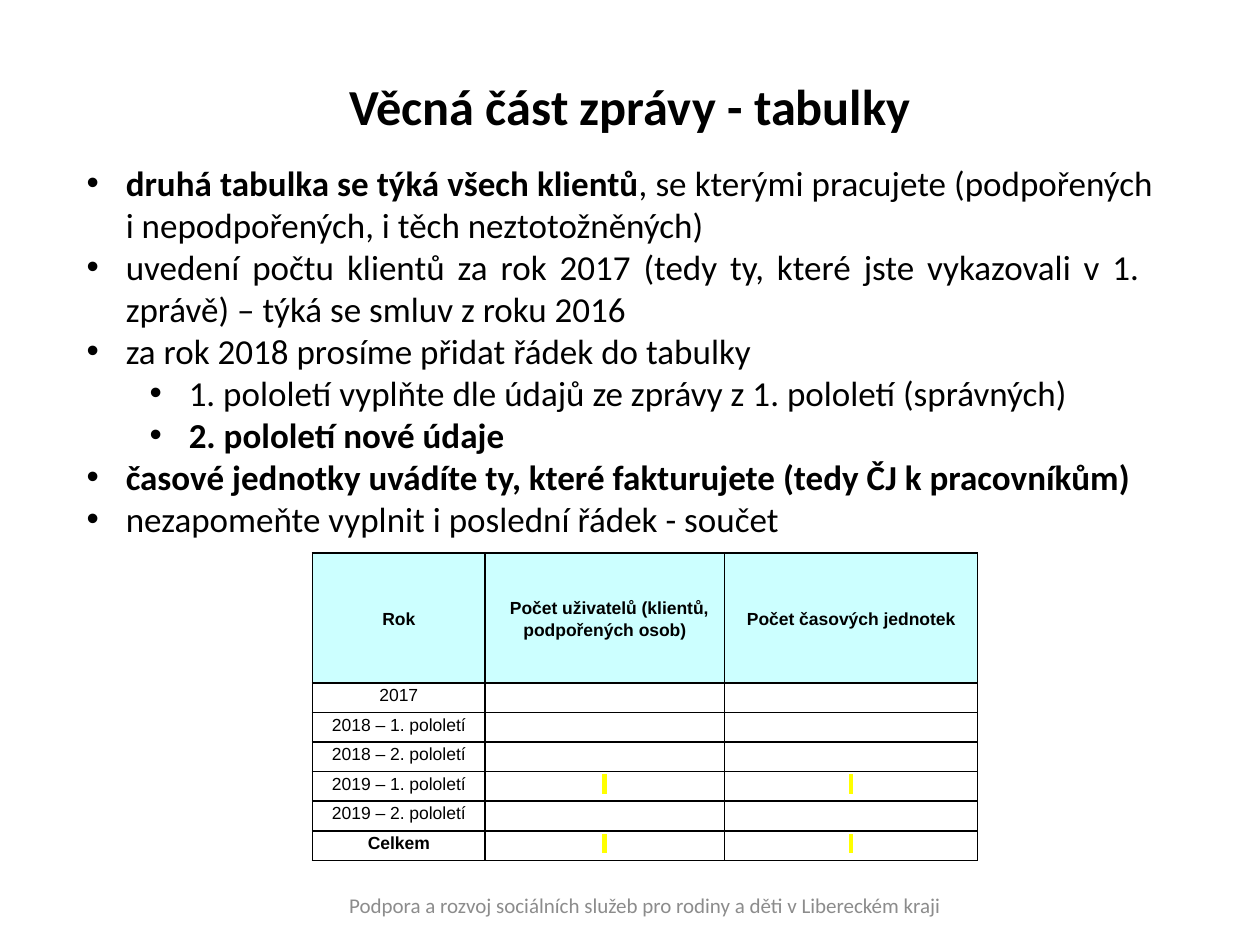
from lxml.etree import SubElement
from pptx import Presentation
from pptx.dml.color import RGBColor
from pptx.enum.text import MSO_ANCHOR as Anchor, MSO_AUTO_SIZE as AutoSize, PP_ALIGN as Align
from pptx.oxml.ns import qn
from pptx.util import Inches, Pt

TITLE = "Věcná část zprávy - tabulky"
FOOTER = "Podpora a rozvoj sociálních služeb pro rodiny a děti v Libereckém kraji"
# (level, [(text, bold), ...])
BULLETS = [
    (0, [("druhá tabulka se týká všech klientů", True),
         (", se kterými pracujete (podpořených i nepodpořených, i těch neztotožněných)", False)]),
    (0, [("uvedení počtu klientů za rok 2017 (tedy ty, které jste vykazovali v 1.  zprávě)"
          " – týká se smluv z roku 2016", False)]),
    (0, [("za rok 2018 prosíme přidat řádek do tabulky", False)]),
    (1, [("1. pololetí vyplňte dle údajů ze zprávy z 1. pololetí (správných)", False)]),
    (1, [("2. pololetí nové údaje", True)]),
    (0, [("časové jednotky uvádíte ty, které fakturujete (tedy ČJ k pracovníkům)", True)]),
    (0, [("nezapomeňte vyplnit i poslední řádek - součet", False)]),
]
HEADERS = ["Rok", "Počet uživatelů (klientů, podpořených osob)", "Počet časových jednotek"]
PERIODS = ["2017", "2018 – 1. pololetí", "2018 – 2. pololetí",
           "2019 – 1. pololetí", "2019 – 2. pololetí", "Celkem"]
MARKED_PERIODS = {"2019 – 1. pololetí", "Celkem"}
COLUMN_WIDTHS = [1.37, 1.9, 2.01]
HEADER_HEIGHT, ROW_HEIGHT = 1.03, 0.235
HANGING = 0.31
BLACK, GREY, CYAN, YELLOW = "000000", "8C8C8C", "CCFFFF", "FFFF00"


def rgb(color):
    return RGBColor.from_string(color)


def style(paragraph, size, font, color=BLACK, bold=None, align=Align.CENTER):
    paragraph.alignment = align
    paragraph.font.size = Pt(size)
    paragraph.font.name = font
    paragraph.font.bold = bold
    paragraph.font.color.rgb = rgb(color)


def indent(paragraph, left, first):
    properties = paragraph._p.get_or_add_pPr()
    properties.set("marL", str(Inches(left)))
    properties.set("indent", str(Inches(first)))
    return properties


def add_solid(parent, color):
    fill = SubElement(parent, qn("a:solidFill"))
    SubElement(fill, qn("a:srgbClr"), val=color)


def add_borders(cell):
    properties = cell._tc.get_or_add_tcPr()
    for position, side in enumerate(("a:lnL", "a:lnR", "a:lnT", "a:lnB")):
        line = SubElement(properties, qn(side), w=str(Pt(1)))
        add_solid(line, BLACK)
        properties.insert(position, line)


def add_highlighted_space(paragraph):
    run = paragraph.add_run()
    run.text = " "
    highlight = SubElement(run._r.get_or_add_rPr(), qn("a:highlight"))
    SubElement(highlight, qn("a:srgbClr"), val=YELLOW)


def fill_cell(cell, text, bold, header, marked):
    cell.margin_left = cell.margin_right = Inches(0.07)
    cell.margin_top = cell.margin_bottom = 0
    cell.vertical_anchor = Anchor.MIDDLE if header else Anchor.TOP
    if header:
        cell.fill.solid()
        cell.fill.fore_color.rgb = rgb(CYAN)
    else:
        cell.fill.background()
    add_borders(cell)
    paragraph = cell.text_frame.paragraphs[0]
    paragraph.line_spacing = 1.15
    style(paragraph, 10, "Arial", bold=bold)
    if text:
        paragraph.add_run().text = text
    elif marked:
        add_highlighted_space(paragraph)
    SubElement(paragraph._p, qn("a:endParaRPr"), sz="1000")
    return paragraph


def add_summary_table(slide):
    rows = [HEADERS] + [[period, "", ""] for period in PERIODS]
    height = HEADER_HEIGHT + ROW_HEIGHT * len(PERIODS)
    table = slide.shapes.add_table(len(rows), len(HEADERS), Inches(2.48), Inches(4.39),
                                   Inches(sum(COLUMN_WIDTHS)), Inches(height)).table
    for column, width in zip(table.columns, COLUMN_WIDTHS):
        column.width = Inches(width)
    for r, texts in enumerate(rows):
        header = r == 0
        table.rows[r].height = Inches(HEADER_HEIGHT if header else ROW_HEIGHT)
        for c, text in enumerate(texts):
            bold = header or text == "Celkem"
            paragraph = fill_cell(table.cell(r, c), text, bold, header,
                                  texts[0] in MARKED_PERIODS)
            if header and c == 1:
                indent(paragraph, 0, 0.07)


def add_bullets(slide):
    frame = slide.shapes.add_textbox(Inches(0.59), Inches(1.23),
                                     Inches(8.66), Inches(3.13)).text_frame
    frame.word_wrap = True
    frame.auto_size = AutoSize.SHAPE_TO_FIT_TEXT
    for i, (level, runs) in enumerate(BULLETS):
        paragraph = frame.add_paragraph() if i else frame.paragraphs[0]
        paragraph.level = level
        properties = indent(paragraph, HANGING + 0.5 * level, -HANGING)
        SubElement(properties, qn("a:buFont"), typeface="Arial")
        SubElement(properties, qn("a:buChar"), char="•")
        style(paragraph, 20, "Calibri", align=Align.JUSTIFY)
        for text, bold in runs:
            run = paragraph.add_run()
            run.text = text
            run.font.bold = bold


def add_footer(slide):
    frame = slide.shapes.add_textbox(Inches(2.56), Inches(6.98),
                                     Inches(5.12), Inches(0.4)).text_frame
    frame.word_wrap = True
    frame.vertical_anchor = Anchor.MIDDLE
    frame.text = FOOTER
    style(frame.paragraphs[0], 12, "Calibri", GREY)


def main():
    deck = Presentation()
    deck.slide_width, deck.slide_height = Inches(10), Inches(7.5)
    slide = deck.slides.add_slide(deck.slide_layouts[5])
    title = slide.shapes.title
    title.left, title.top = Inches(0.5), Inches(0.52)
    title.width, title.height = Inches(9), Inches(0.63)
    title.text_frame.text = TITLE
    title.text_frame.vertical_anchor = Anchor.MIDDLE
    style(title.text_frame.paragraphs[0], 28.8, "Calibri", bold=True)
    add_summary_table(slide)
    add_bullets(slide)
    add_footer(slide)
    deck.save("out.pptx")


if __name__ == "__main__":
    main()
